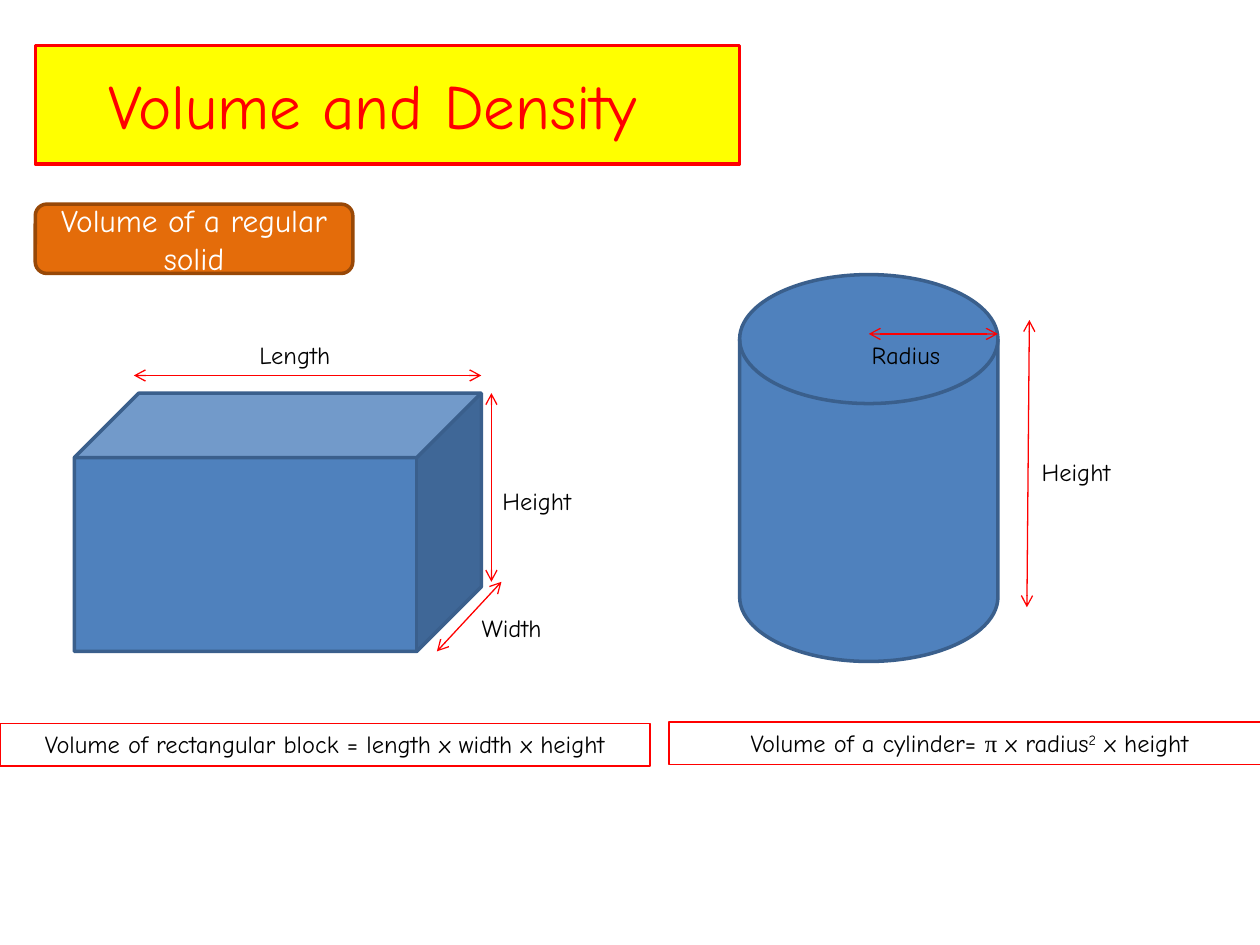
import pptx
import pptx.util
import pptx.dml.color
import pptx.enum.shapes
import pptx.enum.text
import pptx.oxml
import pptx.oxml.ns

Inches, Pt = pptx.util.Inches, pptx.util.Pt
RGBColor = pptx.dml.color.RGBColor
SHAPE = pptx.enum.shapes.MSO_SHAPE
ALIGN = pptx.enum.text.PP_ALIGN
qn = pptx.oxml.ns.qn

RED = RGBColor(0xFF, 0x00, 0x00)
YELLOW = RGBColor(0xFF, 0xFF, 0x00)
ORANGE = RGBColor(0xE4, 0x6C, 0x0A)
BROWN = RGBColor(0x98, 0x48, 0x07)
BLUE = RGBColor(0x4F, 0x81, 0xBD)
NAVY = RGBColor(0x3A, 0x5F, 0x8C)
BLACK = RGBColor(0x00, 0x00, 0x00)
WHITE = RGBColor(0xFF, 0xFF, 0xFF)

FONT = "Comic Neue"
LABEL_W, LABEL_H = 1.38, 0.34


def add_run(p, text, size, color, font=FONT):
    r = p.add_run()
    r.text = text
    r.font.name = font
    r.font.size = Pt(size)
    r.font.color.rgb = color
    return r


def paint(sp, fill, line, width=2):
    sp.fill.solid()
    sp.fill.fore_color.rgb = fill
    sp.line.color.rgb = line
    sp.line.width = Pt(width)


def add_solid(s, kind, box, fill, line):
    sp = s.shapes.add_shape(kind, *map(Inches, box))
    sp.shadow.inherit = False
    paint(sp, fill, line)
    return sp


def add_text_box(s, box):
    """Add a centred text box and return it with its paragraph."""
    sp = s.shapes.add_textbox(*map(Inches, box))
    tf = sp.text_frame
    tf.word_wrap = True
    tf.auto_size = pptx.enum.text.MSO_AUTO_SIZE.SHAPE_TO_FIT_TEXT
    p = tf.paragraphs[0]
    p.alignment = ALIGN.CENTER
    return sp, p


def add_label(s, text, center, top):
    sp, p = add_text_box(s, (center - LABEL_W / 2, top, LABEL_W, LABEL_H))
    add_run(p, text, 14, BLACK)


def add_formula(s, box):
    sp, p = add_text_box(s, box)
    sp.line.color.rgb = RED
    sp.line.width = Pt(0.75)
    return p


def add_dimension(s, x1, y1, x2, y2):
    """Add a thin red arrow with a head at both ends."""
    c = s.shapes.add_connector(pptx.enum.shapes.MSO_CONNECTOR.STRAIGHT,
                               *map(Inches, (x1, y1, x2, y2)))
    c.line.color.rgb = RED
    c.line.width = Pt(0.75)
    ln = c.line._get_or_add_ln()
    for tag in ("a:headEnd", "a:tailEnd"):
        ln.append(pptx.oxml.parse_xml(
            f'<{tag} {pptx.oxml.ns.nsdecls("a")} type="arrow"/>'))
    c._element.spPr.append(pptx.oxml.parse_xml(
        f'<a:effectLst {pptx.oxml.ns.nsdecls("a")}/>'))


def add_title(s, box):
    sp = s.shapes.title
    sp.left, sp.top, sp.width, sp.height = map(Inches, box)
    # Rounded outline for the placeholder
    sp._element.spPr.find(qn("a:xfrm")).addnext(pptx.oxml.parse_xml(
        f'<a:prstGeom {pptx.oxml.ns.nsdecls("a")} prst="roundRect"><a:avLst/></a:prstGeom>'))
    paint(sp, YELLOW, RED)
    tf = sp.text_frame
    tf.margin_left = Inches(0.58)
    tf.vertical_anchor = pptx.enum.text.MSO_ANCHOR.MIDDLE
    p = tf.paragraphs[0]
    p.alignment = ALIGN.LEFT
    add_run(p, "Volume and Density", 36, RED)


def add_subtitle(s, box):
    sp = add_solid(s, SHAPE.ROUNDED_RECTANGLE, box, ORANGE, BROWN)
    tf = sp.text_frame
    tf.word_wrap = True
    tf.vertical_anchor = pptx.enum.text.MSO_ANCHOR.MIDDLE
    p = tf.paragraphs[0]
    p.alignment = ALIGN.CENTER
    add_run(p, "Volume of a regular solid", 18, WHITE)


def add_block(s, box, formula_box):
    x, y, w, h = box
    right, bottom = x + w, y + h
    depth = h / 4
    add_solid(s, SHAPE.CUBE, box, BLUE, NAVY)

    # Dimensions, just outside the edges they measure
    add_label(s, "Length", 2.34, y - 0.47)
    add_dimension(s, x + depth - 0.04, y - 0.14, right, y - 0.14)
    add_label(s, "Height", 4.26, y + 0.69)
    add_dimension(s, right + 0.08, y, right + 0.08, bottom - depth - 0.04)
    add_label(s, "Width", 4.06, y + 1.7)
    add_dimension(s, right + 0.16, bottom - depth - 0.04,
                  right - depth + 0.16, bottom)

    p = add_formula(s, formula_box)
    add_run(p, "Volume of rectangular block = length x width x height", 14, BLACK)


def add_cylinder(s, box, formula_box):
    x, y, w, h = box
    right = x + w
    add_solid(s, SHAPE.FLOWCHART_MAGNETIC_DISK, box, BLUE, NAVY)

    # Dimensions
    add_label(s, "Height", 8.54, y + 1.4)
    add_dimension(s, right + 0.25, y + 0.36, right + 0.23, y + 2.64)
    add_label(s, "Radius", 7.19, y + 0.47)
    add_dimension(s, x + w / 2, y + 0.47, right, y + 0.47)

    p = add_formula(s, formula_box)
    add_run(p, "Volume of a cylinder= ", 14, BLACK)
    add_run(p, "π", 14, BLACK, "Times New Roman")
    add_run(p, " x radius", 14, BLACK)
    r = add_run(p, "2", 14, BLACK)
    r._r.get_or_add_rPr().set("baseline", "30000")
    add_run(p, " x height", 14, BLACK)


def main():
    prs = pptx.Presentation()
    prs.slide_width, prs.slide_height = Inches(10), Inches(7.5)
    s = prs.slides.add_slide(prs.slide_layouts[5])
    add_title(s, (0.28, 0.36, 5.59, 0.94))
    add_subtitle(s, (0.28, 1.62, 2.52, 0.55))
    add_block(s, (0.59, 3.12, 3.23, 2.05), (0, 5.74, 5.16, 0.34))
    add_cylinder(s, (5.87, 2.18, 2.05, 3.07), (5.31, 5.73, 4.77, 0.34))
    prs.save("out.pptx")


if __name__ == "__main__":
    main()
